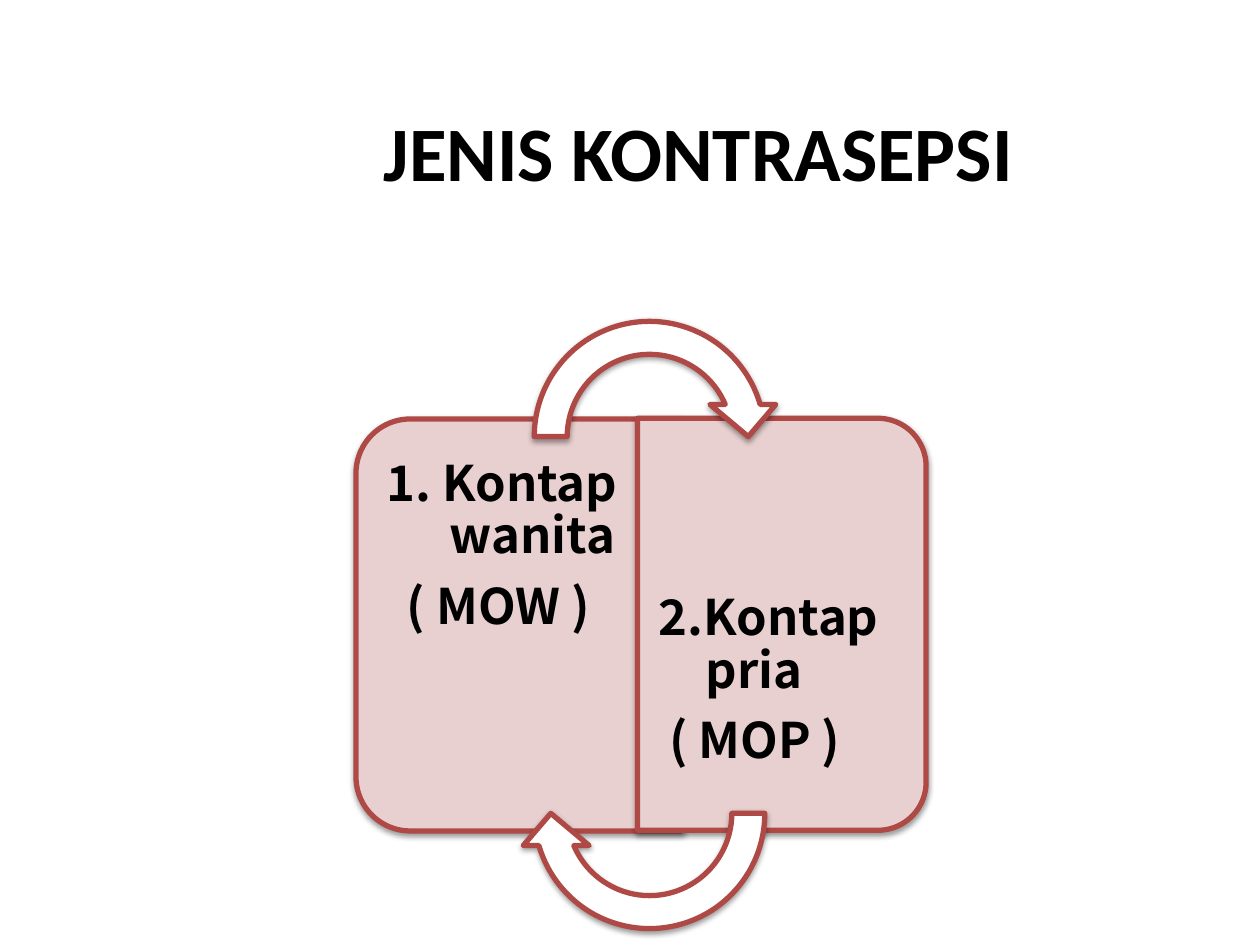
from lxml.etree import SubElement
from pptx import Presentation
from pptx.dml.color import RGBColor
from pptx.enum.shapes import MSO_SHAPE
from pptx.enum.text import MSO_ANCHOR, PP_ALIGN
from pptx.oxml.ns import qn
from pptx.util import Inches, Pt

COLORS = {"text": "000000", "panel": "E8D0D0", "edge": "AE4946", "arrow": "FFFFFF"}
SLIDE_WIDTH, SLIDE_HEIGHT = 10, 7.5
BODY_FONT = "Noto Sans CJK KR"
ARROW_SIZE = 2.09
ARROW_LEFT = 4.11
PANEL_HEIGHT = 3.27


def add_soft_shadow(shape):
    """Give a shape a small shadow that falls straight down."""
    effects = shape._element.spPr.get_or_add_effectLst() if hasattr(
        shape._element.spPr, "get_or_add_effectLst") else SubElement(shape._element.spPr, qn("a:effectLst"))
    shadow = SubElement(effects, qn("a:outerShdw"), blurRad="40000", dist="20000",
                        dir="5400000", rotWithShape="0")
    color = SubElement(shadow, qn("a:srgbClr"), val=COLORS["text"])
    SubElement(color, qn("a:alpha"), val="38000")


def add_outlined(slide, preset, box, fill, rotation, adjustments):
    """Draw a filled preset shape with the red edge and soft shadow."""
    shape = slide.shapes.add_shape(preset, *map(Inches, box))
    shape.rotation = rotation
    for index, value in enumerate(adjustments):
        shape.adjustments[index] = value
    shape.fill.solid()
    shape.fill.fore_color.rgb = RGBColor.from_string(COLORS[fill])
    shape.line.color.rgb = RGBColor.from_string(COLORS["edge"])
    shape.line.width = Pt(3)
    add_soft_shadow(shape)


def add_panel(slide, left, top, width, rotation):
    """Draw a half panel whose rounded side faces outward."""
    add_outlined(slide, MSO_SHAPE.ROUND_2_SAME_RECTANGLE, (left, top, PANEL_HEIGHT, width),
                 "panel", rotation, (0.167, 0))


def add_cycle_arrow(slide, top, rotation):
    """Draw one curved arrow of the cycle."""
    add_outlined(slide, MSO_SHAPE.CIRCULAR_ARROW, (ARROW_LEFT, top, ARROW_SIZE, ARROW_SIZE),
                 "arrow", rotation, (0.125, 11.42319, 204.57681, 108, 0.125))


def add_text(slide, box, paragraphs, *, size, font, align=PP_ALIGN.LEFT, anchor=MSO_ANCHOR.TOP,
             insets=(0.1, 0.05, 0.1, 0.05), spacing=1.0, after=0):
    """Write (text, left margin, first-line indent) paragraphs in bold."""
    frame = slide.shapes.add_textbox(*map(Inches, box)).text_frame
    frame.word_wrap = True
    frame.vertical_anchor = anchor
    (frame.margin_left, frame.margin_top,
     frame.margin_right, frame.margin_bottom) = map(Inches, insets)
    for index, (text, margin, indent) in enumerate(paragraphs):
        paragraph = frame.add_paragraph() if index else frame.paragraphs[0]
        properties = paragraph._p.get_or_add_pPr()
        properties.set("marL", str(Inches(margin)))
        properties.set("indent", str(Inches(indent)))
        paragraph.alignment = align
        paragraph.line_spacing = spacing
        paragraph.space_after = Pt(after)
        run = paragraph.add_run()
        run.text = text
        run.font.size = Pt(size)
        run.font.name = font
        run.font.bold = True
        run.font.color.rgb = RGBColor.from_string(COLORS["text"])


def main():
    """Build the slide and save it."""
    deck = Presentation()
    deck.slide_width, deck.slide_height = Inches(SLIDE_WIDTH), Inches(SLIDE_HEIGHT)
    slide = deck.slides.add_slide(deck.slide_layouts[6])
    label_style = {"size": 28, "font": BODY_FONT, "spacing": 0.9, "after": 9.8}

    add_text(slide, (2.17, 0.67, 6.75, 1.05), [("JENIS KONTRASEPSI", 0, 0)], size=44,
             font="Calibri", align=PP_ALIGN.CENTER, anchor=MSO_ANCHOR.MIDDLE)
    add_panel(slide, 2.48, 3.67, 2.58, 270)
    add_text(slide, (2.95, 3.45, 2.45, 3.02),
             [("1. Kontap wanita", 0.5, -0.5), ("( MOW )", 0.16, 0)],
             insets=(0.12, 0.19, 0.17, 0.19), **label_style)
    add_panel(slide, 4.57, 3.81, 2.29, 90)
    add_text(slide, (5.06, 3.44, 2.18, 3.04),
             [("2.Kontap pria", 0.37, -0.37), ("( MOP )", 0.08, 0)],
             insets=(0.17, 1.33, 0.12, 0.19), **label_style)
    add_cycle_arrow(slide, 2.42, 0)
    add_cycle_arrow(slide, SLIDE_HEIGHT - ARROW_SIZE, 180)
    deck.save("out.pptx")


if __name__ == "__main__":
    main()
